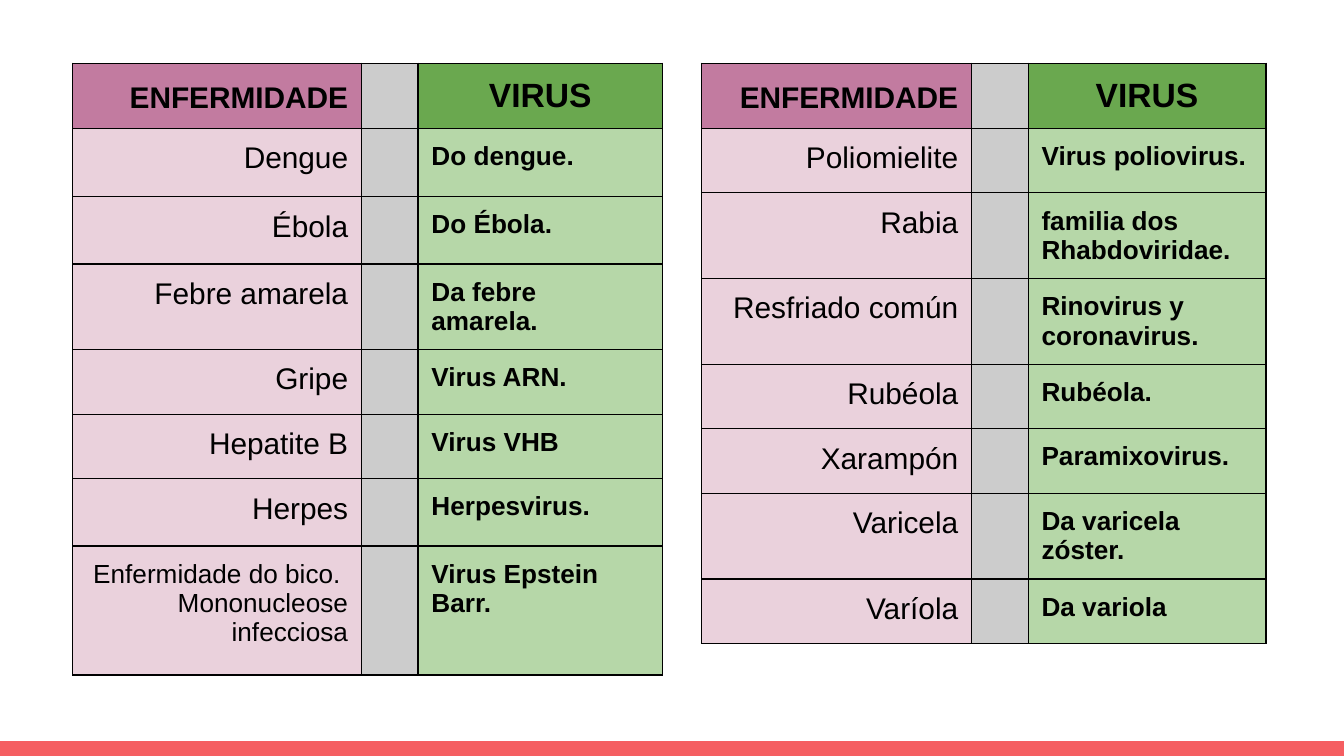
"""Build a slide with two tables that pair diseases with their viruses."""
from lxml.etree import SubElement
from pptx import Presentation
from pptx.dml.color import RGBColor
from pptx.enum.shapes import MSO_SHAPE
from pptx.enum.text import PP_ALIGN
from pptx.oxml.ns import qn
from pptx.util import Inches, Pt

BLACK = RGBColor(0x00, 0x00, 0x00)
CORAL = RGBColor(0xF5, 0x5E, 0x61)
GREY = RGBColor(0xCC, 0xCC, 0xCC)
MAUVE = RGBColor(0xC2, 0x7B, 0xA0)
PINK = RGBColor(0xEA, 0xD1, 0xDC)
GREEN = RGBColor(0x6A, 0xA8, 0x4F)
LIGHT_GREEN = RGBColor(0xB6, 0xD7, 0xA8)

TABLES = [
    {
        "left": 0.54,
        "columns": [2.15, 0.42, 1.82],
        "heights": [0.45, 0.51, 0.5, 0.5, 0.45, 0.43, 0.5, 0.96],
        "entries": [
            ("Dengue", "Do dengue."),
            ("Ébola", "Do Ébola."),
            ("Febre amarela", "Da febre amarela."),
            ("Gripe", "Virus ARN."),
            ("Hepatite B", "Virus VHB"),
            ("Herpes", "Herpesvirus."),
            ("Enfermidade do bico. \nMononucleose infecciosa", "Virus Epstein Barr."),
        ],
    },
    {
        "left": 5.22,
        "columns": [2.01, 0.42, 1.77],
        "heights": [0.41, 0.41, 0.61, 0.61, 0.41, 0.41, 0.61, 0.41],
        "entries": [
            ("Poliomielite", "Virus poliovirus."),
            ("Rabia", "familia dos Rhabdoviridae."),
            ("Resfriado común", "Rinovirus y coronavirus."),
            ("Rubéola", "Rubéola."),
            ("Xarampón", "Paramixovirus."),
            ("Varicela", "Da varicela zóster."),
            ("Varíola", "Da variola"),
        ],
    },
]


def write_cell(cell, text, fill, size=18, bold=False, align=PP_ALIGN.LEFT, spacing=None):
    cell.margin_left = cell.margin_right = Inches(0.1)
    cell.margin_top = cell.margin_bottom = Inches(0.1)
    cell.text_frame.text = text
    for paragraph in cell.text_frame.paragraphs:
        paragraph.alignment = align
        paragraph.line_spacing = spacing
        for run in paragraph.runs:
            run.font.name = "Arial"
            run.font.size = Pt(size)
            run.font.bold = bold
            run.font.color.rgb = BLACK
        paragraph_end = SubElement(paragraph._p, qn("a:endParaRPr"), sz=str(size * 100))
        SubElement(paragraph_end, qn("a:latin"), typeface="Arial")
    properties = cell._tc.get_or_add_tcPr()
    for side in ("a:lnL", "a:lnR", "a:lnT", "a:lnB"):
        border = SubElement(properties, qn(side), w=str(Pt(0.75)))
        border_fill = SubElement(border, qn("a:solidFill"))
        SubElement(border_fill, qn("a:srgbClr"), val=str(BLACK))
    cell.fill.solid()
    cell.fill.fore_color.rgb = fill


presentation = Presentation()
presentation.slide_width = Inches(10)
presentation.slide_height = Inches(10) * 9 // 16
slide = presentation.slides.add_slide(presentation.slide_layouts[6])

bar_height = Inches(0.11)
footer_bar = slide.shapes.add_shape(
    MSO_SHAPE.RECTANGLE, Inches(0), presentation.slide_height - bar_height,
    presentation.slide_width, bar_height,
)
footer_bar.shadow.inherit = False
footer_bar.fill.solid()
footer_bar.fill.fore_color.rgb = CORAL
footer_bar.line.fill.background()

for content in TABLES:
    widths, heights = content["columns"], content["heights"]
    table = slide.shapes.add_table(
        len(heights), len(widths), Inches(content["left"]), Inches(0.47),
        Inches(sum(widths)), Inches(sum(heights)),
    ).table
    for column, width in zip(table.columns, widths):
        column.width = Inches(width)
    for row, height in zip(table.rows, heights):
        row.height = Inches(height)
        write_cell(row.cells[1], "", GREY)

    write_cell(table.cell(0, 0), "ENFERMIDADE", MAUVE, size=16, bold=True,
               align=PP_ALIGN.RIGHT, spacing=1.15)
    write_cell(table.cell(0, 2), "VIRUS", GREEN, bold=True, align=PP_ALIGN.CENTER)
    for index, (disease, virus) in enumerate(content["entries"], start=1):
        disease_size = 14 if "\n" in disease else 16
        write_cell(table.cell(index, 0), disease, PINK, size=disease_size, align=PP_ALIGN.RIGHT)
        write_cell(table.cell(index, 2), virus, LIGHT_GREEN, size=14, bold=True)

presentation.save("out.pptx")
